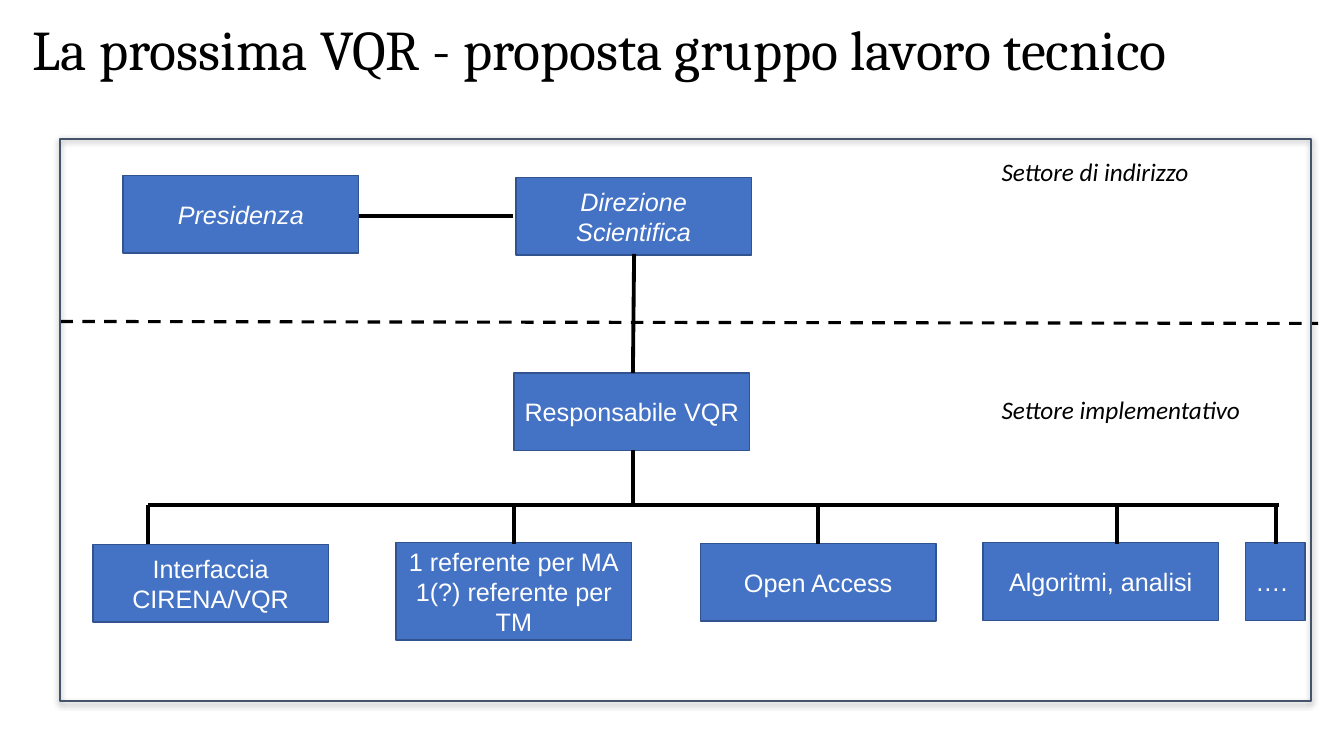
import pptx
import pptx.dml.color
import pptx.enum.dml
import pptx.enum.shapes
import pptx.enum.text
import pptx.oxml
import pptx.oxml.ns
import pptx.util
from pptx.util import Cm, Pt

COLOURS = {
    "box": "4472C4",
    "box_edge": "31538F",
    "frame": "44546A",
    "text": "000000",
    "box_text": "FFFFFF",
    "line": "000000",
}
COLOURS = {name: pptx.dml.color.RGBColor.from_string(value) for name, value in COLOURS.items()}
ALIGN = pptx.enum.text.PP_ALIGN
ANCHOR = pptx.enum.text.MSO_ANCHOR
RECTANGLE = pptx.enum.shapes.MSO_SHAPE.RECTANGLE
BOX_WIDTH, BOX_HEIGHT = 5.94, 1.96


def write(shape, text, font, size, colour, italic=False, align=ALIGN.LEFT, anchor=ANCHOR.MIDDLE):
    """Put one formatted paragraph in a shape; a vertical tab breaks the line."""
    frame = shape.text_frame
    frame.word_wrap = True
    frame.vertical_anchor = anchor
    para = frame.paragraphs[0]
    para.text = text
    para.alignment = align
    for span in para.runs:
        span.font.name = font
        span.font.size = Pt(size)
        span.font.italic = italic
        span.font.color.rgb = COLOURS[colour]
    return para


def draw_line(x1, y1, x2, y2, width=2.75):
    line = page.shapes.add_connector(
        pptx.enum.shapes.MSO_CONNECTOR.STRAIGHT, Cm(x1), Cm(y1), Cm(x2), Cm(y2))
    line.line.color.rgb = COLOURS["line"]
    line.line.width = Pt(width)
    line._element.spPr.append(pptx.oxml.parse_xml(
        f"<a:effectLst {pptx.oxml.ns.nsdecls('a')}/>"))
    return line


deck = pptx.Presentation()
deck.slide_width, deck.slide_height = Cm(33.87), Cm(19.05)
page = deck.slides.add_slide(deck.slide_layouts[6])

# Title
title = page.shapes.add_textbox(Cm(0.58), Cm(-0.53), Cm(32.28), Cm(3.68))
para = write(title, "La prossima VQR - proposta gruppo lavoro tecnico", "Cambria", 40, "text")
para.line_spacing = 0.9

# Boxes of the chart: text, left, top, width, height, italic, alignment
boxes = [
    ("Presidenza", 3.1, 4.42, BOX_WIDTH, BOX_HEIGHT, True, ALIGN.CENTER),
    ("Direzione Scientifica", 13.0, 4.47, BOX_WIDTH, BOX_HEIGHT, True, ALIGN.CENTER),
    ("Responsabile VQR", 12.95, 9.4, BOX_WIDTH, BOX_HEIGHT, False, ALIGN.CENTER),
    ("Interfaccia CIRENA/VQR", 2.34, 13.72, BOX_WIDTH, BOX_HEIGHT, False, ALIGN.CENTER),
    ("1 referente per MA\v1(?) referente per TM", 9.98, 13.67, BOX_WIDTH, 2.46, False, ALIGN.CENTER),
    ("Open Access", 17.65, 13.69, BOX_WIDTH, BOX_HEIGHT, False, ALIGN.CENTER),
    ("Algoritmi, analisi", 24.77, 13.67, BOX_WIDTH, BOX_HEIGHT, False, ALIGN.CENTER),
    ("….", 31.39, 13.67, 1.5, BOX_HEIGHT, False, ALIGN.LEFT),
]
for text, left, top, width, height, italic, align in boxes:
    box = page.shapes.add_shape(RECTANGLE, Cm(left), Cm(top), Cm(width), Cm(height))
    box.shadow.inherit = False
    box.fill.solid()
    box.fill.fore_color.rgb = COLOURS["box"]
    box.line.color.rgb = COLOURS["box_edge"]
    box.line.width = Pt(1)
    write(box, text, "Arial", 18, "box_text", italic, align)

# Links between the upper boxes, then the branches below
trunk_x, branch_y, branch_end = 15.95, 12.73, 13.72
draw_line(12.93, 5.44, 9.04, 5.44)
draw_line(trunk_x, 9.4, 15.98, 6.4)
draw_line(trunk_x, 11.35, trunk_x, branch_y)
draw_line(3.73, branch_y, 32.23, branch_y)
for branch_x in (3.73, 12.95, 20.62, 28.14, 32.16):
    draw_line(branch_x, branch_y, branch_x, branch_end)

# Border between the two sectors and their labels
border = draw_line(1.52, 8.1, 33.22, 8.15, 2.25)
border.line.dash_style = pptx.enum.dml.MSO_LINE.DASH
for text, top, width in (("Settore di indirizzo", 3.81, 5.36),
                         ("Settore implementativo", 9.8, 6.68)):
    label = page.shapes.add_textbox(Cm(24.99), Cm(top), Cm(width), Cm(1.02))
    write(label, text, "Calibri", 18, "text", italic=True, anchor=ANCHOR.TOP)

# Outer frame with a soft shadow below
frame = page.shapes.add_shape(RECTANGLE, Cm(1.52), Cm(3.51), Cm(31.52), Cm(14.15))
frame.fill.background()
frame.line.color.rgb = COLOURS["frame"]
frame.line.width = Pt(1.5)
frame.shadow.inherit = False
effects = frame._element.spPr.find(pptx.oxml.ns.qn("a:effectLst"))
effects.append(pptx.oxml.parse_xml(
    f'<a:outerShdw {pptx.oxml.ns.nsdecls("a")} blurRad="{Pt(4.5)}" dist="{Pt(1.5)}" '
    f'dir="5400000" rotWithShape="0"><a:srgbClr val="{COLOURS["line"]}">'
    '<a:alpha val="40000"/></a:srgbClr></a:outerShdw>'))

deck.save("out.pptx")
